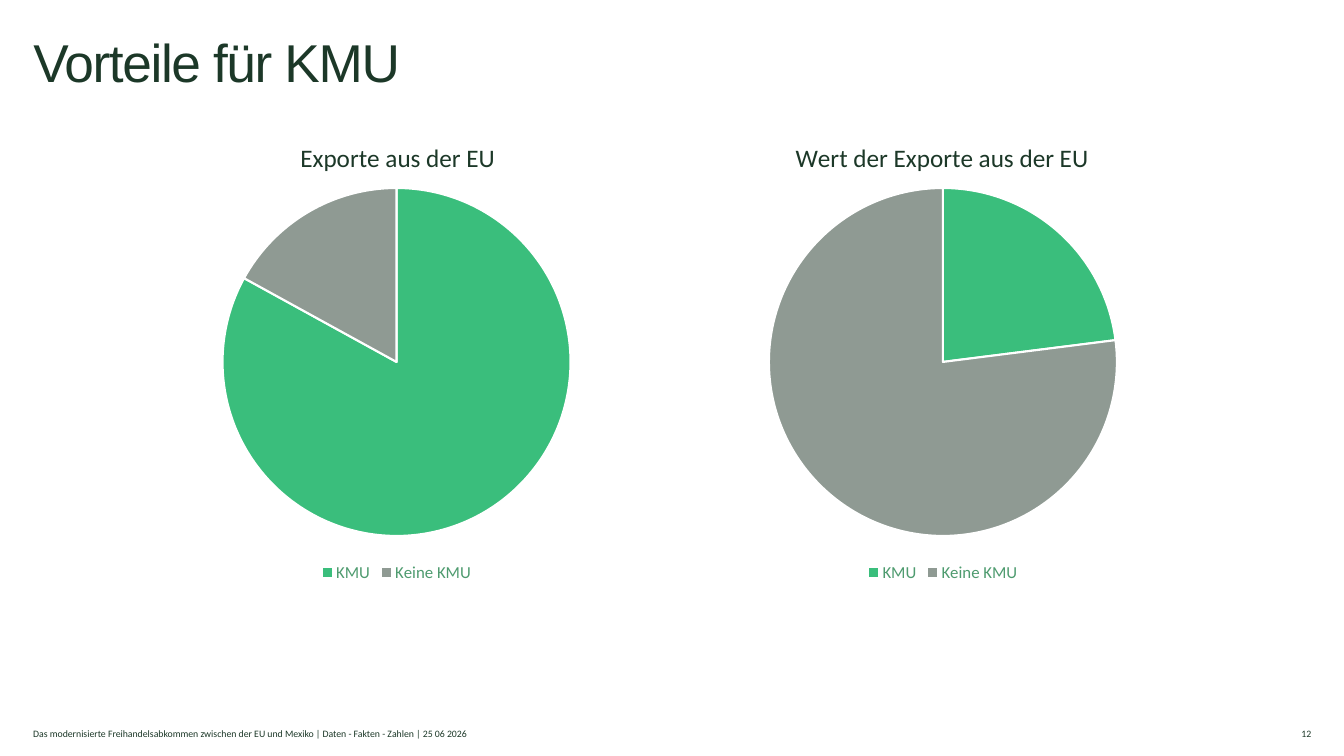
import pptx
import pptx.chart.data
import pptx.dml.color
import pptx.enum.chart
import pptx.enum.text
import pptx.oxml
import pptx.oxml.ns
import pptx.util

Pt = pptx.util.Pt
COLORS = {"ink": "1C3828", "legend": "4E9B6F", "KMU": "3ABE7C",
          "Keine KMU": "8F9A93", "white": "FFFFFF"}
CHART_TOP, CHART_HEIGHT = 82.8, 336.24
PIE_SIZE, PIE_TOP = 248.6, 51.5
TITLE_TOP = 14.5


def add_text(text, left, top, width, height, size, font):
    box = page.shapes.add_textbox(Pt(left), Pt(top), Pt(width), Pt(height))
    frame = box.text_frame
    frame.margin_left = frame.margin_right = frame.margin_top = frame.margin_bottom = 0
    frame.text = text
    span = frame.paragraphs[0].runs[0]
    span.font.size = Pt(size)
    span.font.name = font
    span.font.color.rgb = pptx.dml.color.RGBColor.from_string(COLORS["ink"])
    return frame


def set_layout(part, index, fractions):
    """Place a chart part by hand; fractions maps x, y, w, h to shares of the chart."""
    for old in part.findall(pptx.oxml.ns.qn("c:layout")):
        part.remove(old)
    inner = '<c:layoutTarget val="inner"/>' if "w" in fractions else ""
    modes = "".join(f'<c:{key}Mode val="edge"/>' for key in "xy")
    values = "".join(f'<c:{key} val="{value:.4f}"/>' for key, value in fractions.items())
    part.insert(index, pptx.oxml.parse_xml(
        f'<c:layout {pptx.oxml.ns.nsdecls("c")}><c:manualLayout>'
        f'{inner}{modes}{values}</c:manualLayout></c:layout>'))


deck = pptx.Presentation()
deck.slide_width, deck.slide_height = Pt(960), Pt(540)
page = deck.slides.add_slide(deck.slide_layouts[6])

heading = add_text("Vorteile für KMU", 23.76, 25.92, 864.72, 28.08, 38, "Arial")
heading.word_wrap = True
heading.paragraphs[0].line_spacing = 0.9
heading.paragraphs[0].runs[0].font._element.set("spc", "-100")

# title, left, width, title width, share of each category
pies = [
    ("Exporte aus der EU", 43.92, 478.8, 144, (83, 17)),
    ("Wert der Exporte aus der EU", 455.76, 435.6, 217, (23, 77)),
]
categories = ("KMU", "Keine KMU")
for title, left, width, title_width, shares in pies:
    data = pptx.chart.data.CategoryChartData()
    data.categories = categories
    data.add_series("Series 1", shares)
    chart = page.shapes.add_chart(
        pptx.enum.chart.XL_CHART_TYPE.PIE, Pt(left), Pt(CHART_TOP),
        Pt(width), Pt(CHART_HEIGHT), data).chart
    chart.font.name = "Calibri"
    chart.font.size = Pt(10)
    chart.font.color.rgb = pptx.dml.color.RGBColor.from_string(COLORS["ink"])

    chart.has_title = True
    chart.chart_title.include_in_layout = False
    chart.chart_title.text_frame.text = title
    span = chart.chart_title.text_frame.paragraphs[0].runs[0]
    span.font.size = Pt(18)
    span.font.bold = False
    span.font.name = "Calibri"
    span.font.color.rgb = pptx.dml.color.RGBColor.from_string(COLORS["ink"])
    set_layout(chart.chart_title._element, 1, {
        "x": (width - title_width) / 2 / width, "y": TITLE_TOP / CHART_HEIGHT})

    chart.has_legend = True
    chart.legend.position = pptx.enum.chart.XL_LEGEND_POSITION.BOTTOM
    chart.legend.include_in_layout = False
    chart.legend.font.size = Pt(12)
    chart.legend.font.name = "Calibri"
    chart.legend.font.color.rgb = pptx.dml.color.RGBColor.from_string(COLORS["legend"])

    plot = chart.plots[0]
    plot.vary_by_categories = True
    for index, category in enumerate(categories):
        slice_format = plot.series[0].points[index].format
        slice_format.fill.solid()
        slice_format.fill.fore_color.rgb = pptx.dml.color.RGBColor.from_string(COLORS[category])
        slice_format.line.color.rgb = pptx.dml.color.RGBColor.from_string(COLORS["white"])
        slice_format.line.width = Pt(1.5)
    plot_area = chart._chartSpace.find(".//" + pptx.oxml.ns.qn("c:plotArea"))
    set_layout(plot_area, 0, {
        "x": (width - PIE_SIZE) / 2 / width, "y": PIE_TOP / CHART_HEIGHT,
        "w": PIE_SIZE / width, "h": PIE_SIZE / CHART_HEIGHT})

footer = add_text(
    "Das modernisierte Freihandelsabkommen zwischen der EU und Mexiko"
    " | Daten - Fakten - Zahlen | 25 06 2026",
    23.76, 519.84, 436.32, 8.64, 7, "Calibri")
number = add_text("12", 922.32, 519.84, 14.4, 8.64, 7, "Calibri")
number.paragraphs[0].alignment = pptx.enum.text.PP_ALIGN.RIGHT
for frame in (footer, number):
    frame.vertical_anchor = pptx.enum.text.MSO_ANCHOR.MIDDLE
    frame.word_wrap = True

deck.save("out.pptx")
